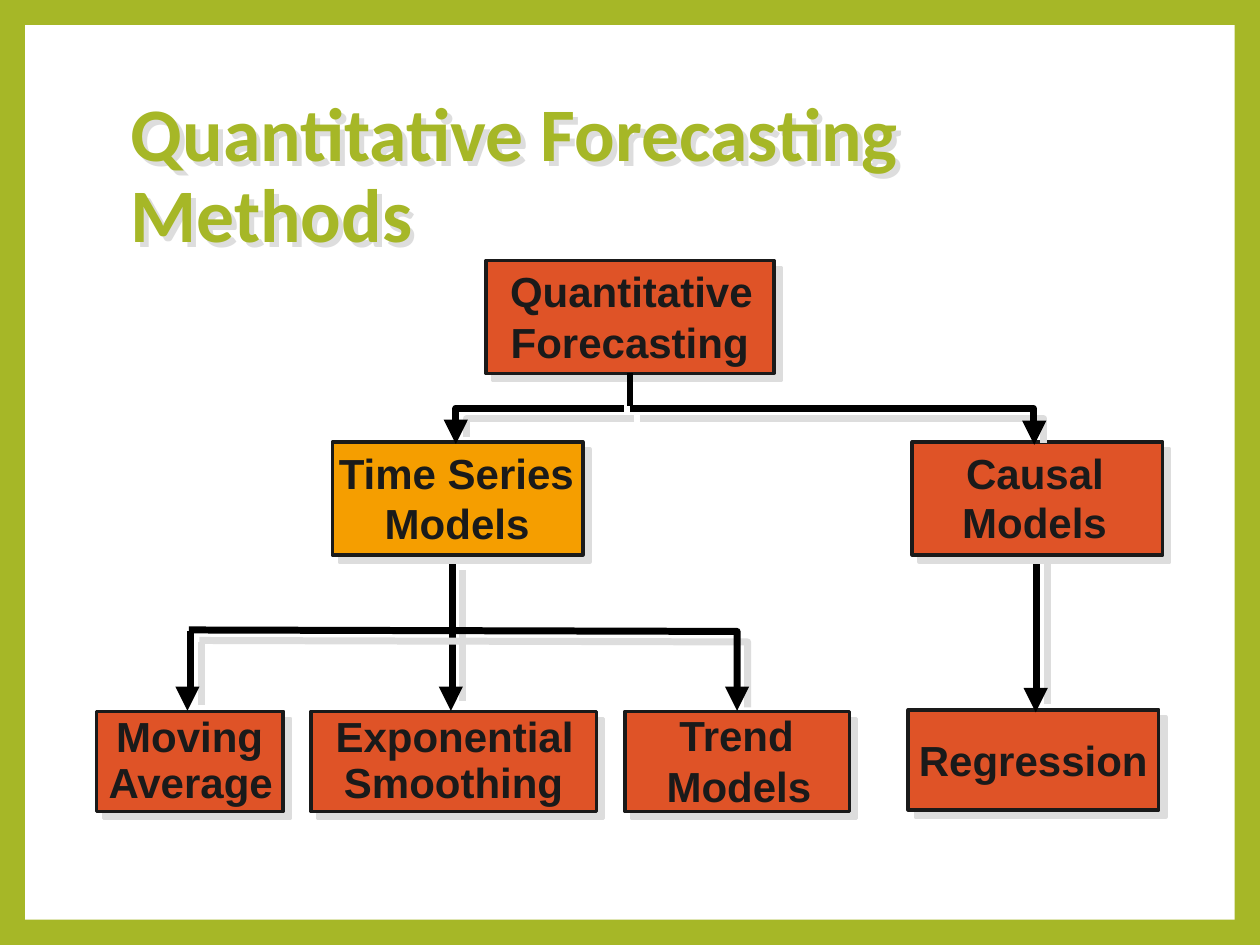
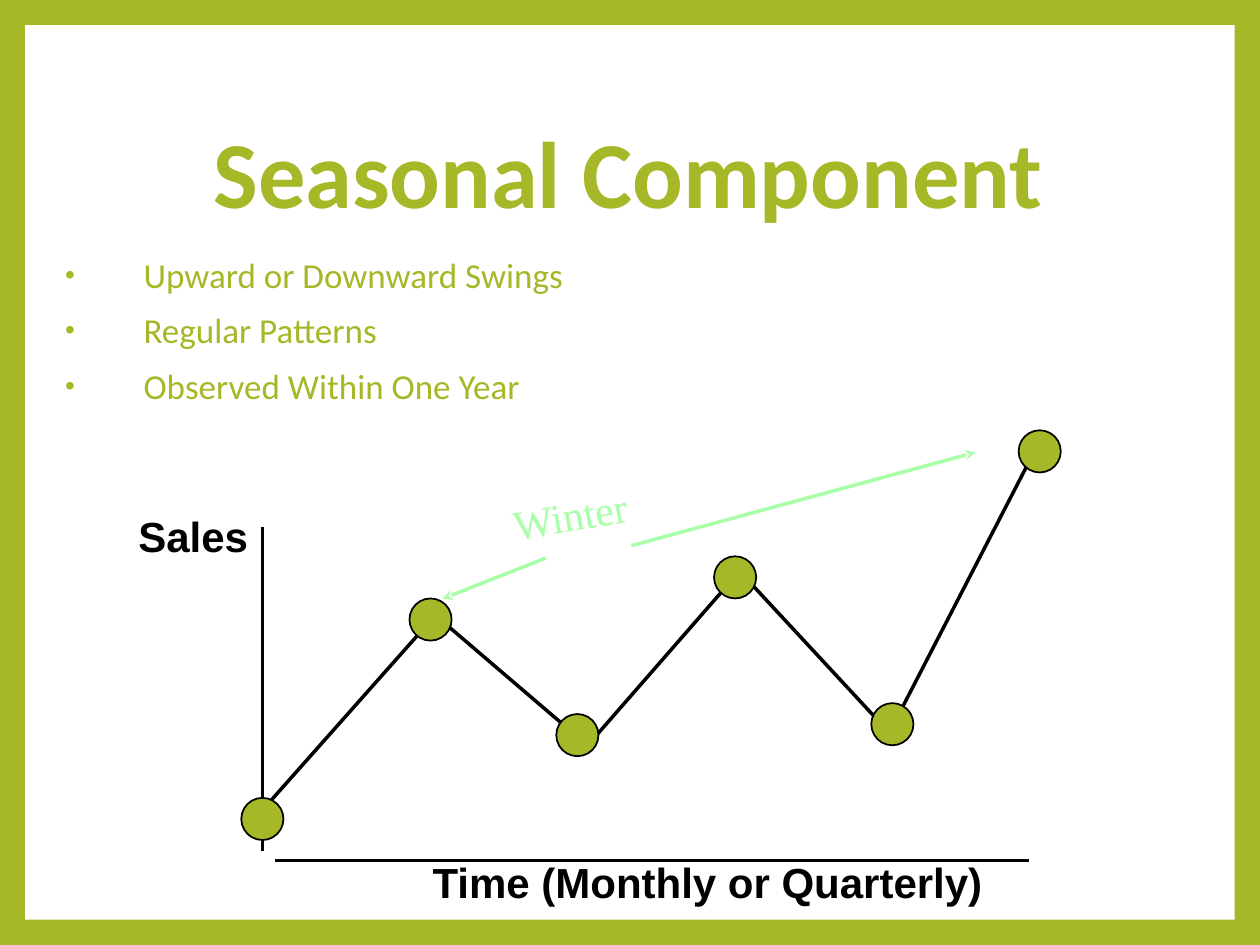
from dataclasses import dataclass

from lxml.etree import SubElement
from pptx import Presentation
from pptx.dml.color import RGBColor
from pptx.enum.shapes import MSO_CONNECTOR, MSO_SHAPE
from pptx.enum.text import MSO_ANCHOR, MSO_AUTO_SIZE, PP_ALIGN
from pptx.oxml.ns import qn
from pptx.util import Cm, Pt


@dataclass(frozen=True)
class Theme:
    green = RGBColor(0xA6, 0xB7, 0x27)
    white = RGBColor(0xFF, 0xFF, 0xFF)
    black = RGBColor(0, 0, 0)
    ink = RGBColor(0x1A, 0x1A, 0x1A)
    orange = RGBColor(0xDF, 0x53, 0x27)
    amber = RGBColor(0xF5, 0x9E, 0x00)
    mint = RGBColor(0xA7, 0xFF, 0xA7)
    shadow = RGBColor(0xDD, 0xDD, 0xDD)
    heading_font = "Calibri"
    label_font = "Arial"
    season_font = "Times New Roman"
    label_size = Pt(24)
    list_size = Pt(20)
    title_shadow = Pt(4)
    box_shadow = Pt(5.7)
    edge_shadow = Pt(8.5)


theme = Theme()


def set_shadow(shape, distance=0):
    """Replace the theme shadow by a grey one to the lower right, or by none."""
    effects = SubElement(shape.element.spPr, qn("a:effectLst"))
    if distance:
        outer = SubElement(effects, qn("a:outerShdw"), dist=str(distance), dir="2700000", algn="ctr")
        SubElement(outer, qn("a:srgbClr"), val=str(theme.shadow))


def set_line(shape, color, width, arrow=None, shadow=0):
    """Style the outline, its arrowhead and the shadow."""
    shape.line.color.rgb = color
    shape.line.width = width
    if arrow:
        SubElement(shape.element.spPr.find(qn("a:ln")), qn("a:tailEnd"), type=arrow)
    set_shadow(shape, shadow)


deck = Presentation()
deck.slide_width = Cm(25.4)
deck.slide_height = Cm(19.05)
methods = deck.slides.add_slide(deck.slide_layouts[5])
seasonal = deck.slides.add_slide(deck.slide_layouts[1])

# Shared frame: green background with a white panel on the master
master = deck.slide_master
master.background.fill.solid()
master.background.fill.fore_color.rgb = theme.green
panel = methods.shapes.add_shape(MSO_SHAPE.RECTANGLE, Cm(0.51), Cm(0.51), Cm(24.38), Cm(18.03))
panel.fill.solid()
panel.fill.fore_color.rgb = theme.white
panel.line.fill.background()
set_shadow(panel)
master.shapes.element.insert(2, panel.element)

# Shared title style
for slide, wording, size, alignment in (
    (methods, "Quantitative Forecasting Methods", Pt(43.2), PP_ALIGN.LEFT),
    (seasonal, "Seasonal Component", Pt(54), PP_ALIGN.CENTER),
):
    title = slide.shapes.title
    title.left, title.top, title.width, title.height = Cm(2.38), Cm(1.7), Cm(20.57), Cm(3.76)
    title.text_frame.text = wording
    title.text_frame.auto_size = MSO_AUTO_SIZE.NONE
    title.text_frame.vertical_anchor = MSO_ANCHOR.MIDDLE
    heading = title.text_frame.paragraphs[0]
    heading.alignment = alignment
    heading.line_spacing = 0.9
    heading.font.name = theme.heading_font
    heading.font.size = size
    heading.font.bold = True
    heading.font.color.rgb = theme.green
set_shadow(methods.shapes.title, theme.title_shadow)

# Slide 1: stems that start behind the boxes
for x, top, bottom in ((9.12, 11.28, 13.92), (20.9, 11.07, 13.97)):
    stem = methods.shapes.add_connector(MSO_CONNECTOR.STRAIGHT, Cm(x), Cm(top), Cm(x), Cm(bottom))
    set_line(stem, theme.black, Pt(4), shadow=theme.edge_shadow)

# Slide 1: boxes, the root first
method_boxes = [
    (9.8, 5.25, 5.8, 2.28, theme.orange),
    (6.7, 8.91, 5.05, 2.28, theme.amber),
    (18.39, 8.91, 5.05, 2.28, theme.orange),
    (1.95, 14.34, 3.76, 2.02, theme.orange),
    (6.27, 14.34, 5.76, 2.02, theme.orange),
    (12.6, 14.34, 4.53, 2.02, theme.orange),
    (18.31, 14.31, 5.05, 2.02, theme.orange),
]
boxes = []
for left, top, width, height, fill in method_boxes:
    box = methods.shapes.add_shape(MSO_SHAPE.RECTANGLE, Cm(left), Cm(top), Cm(width), Cm(height))
    box.fill.solid()
    box.fill.fore_color.rgb = fill
    set_line(box, theme.ink, Pt(2), shadow=theme.box_shadow)
    boxes.append(box)

# Slide 1: branches and arrowheads between the levels
for first, *bends in (
    [(12.7, 8.23), (20.83, 8.23), (20.83, 8.71)],
    [(12.57, 8.23), (9.19, 8.23), (9.19, 8.59)],
    [(3.81, 12.7), (14.86, 12.73), (14.86, 14.05)],
):
    route = methods.shapes.build_freeform(*map(Cm, first))
    route.add_line_segments([(Cm(x), Cm(y)) for x, y in bends], close=False)
    branch = route.convert_to_shape()
    branch.fill.background()
    set_line(branch, theme.black, Pt(4), shadow=theme.edge_shadow)

drop = methods.shapes.add_connector(MSO_CONNECTOR.STRAIGHT, Cm(3.84), Cm(12.73), Cm(3.84), Cm(14))
set_line(drop, theme.black, Pt(4), shadow=theme.edge_shadow)
trunk = methods.shapes.add_connector(MSO_CONNECTOR.STRAIGHT, Cm(12.7), Cm(7.53), Cm(12.7), Cm(8.18))
trunk.begin_connect(boxes[0], 2)
set_line(trunk, theme.black, Pt(4))

head_size = 0.49
for x, top in ((20.88, 13.87), (20.85, 8.48), (9.09, 13.84), (3.78, 13.84), (9.19, 8.46), (14.86, 13.84)):
    outline = methods.shapes.build_freeform(Cm(x + head_size / 2), Cm(top))
    outline.add_line_segments([(Cm(x), Cm(top + head_size)), (Cm(x - head_size / 2), Cm(top))])
    arrowhead = outline.convert_to_shape()
    arrowhead.fill.solid()
    arrowhead.fill.fore_color.rgb = theme.black
    arrowhead.line.fill.background()
    set_shadow(arrowhead)

# Slide 1: one text line per label, centred on its place in the box
method_labels = [
    ("Quantitative", 10.01, 5.23, 5.44),
    ("Forecasting", 10.03, 6.25, 5.33),
    ("Time Series", 6.56, 8.89, 5.28),
    ("Models", 7.49, 9.91, 3.45),
    ("Causal", 19.2, 8.89, 3.33),
    ("Models", 19.13, 9.88, 3.45),
    ("Moving", 2.07, 14.2, 3.51),
    ("Average", 1.9, 15.13, 3.89),
    ("Exponential", 6.5, 14.2, 5.33),
    ("Smoothing", 6.67, 15.13, 4.95),
    ("Trend", 13.4, 14.18, 2.9),
    ("Models", 13.17, 15.2, 3.45),
    ("Regression", 18.25, 14.68, 5.16),
]
for wording, left, top, width in method_labels:
    label = methods.shapes.add_textbox(Cm(left), Cm(top), Cm(width), Cm(1.28))
    label.text_frame.word_wrap = False
    label.text_frame.text = wording
    caption = label.text_frame.paragraphs[0]
    caption.alignment = PP_ALIGN.CENTER
    caption.font.name = theme.label_font
    caption.font.size = theme.label_size
    caption.font.bold = True
    caption.font.color.rgb = theme.ink

# Slide 2: list of traits
traits = seasonal.placeholders[1]
traits.left, traits.top, traits.width, traits.height = Cm(1.06), Cm(5.08), Cm(24.33), Cm(11.43)
traits.text_frame.text = "Upward or Downward Swings\nRegular Patterns\nObserved Within One Year"
traits.text_frame.auto_size = MSO_AUTO_SIZE.NONE
for trait in traits.text_frame.paragraphs:
    trait.line_spacing = 0.9
    trait.space_before = Pt(10)
    properties = trait._p.get_or_add_pPr()
    properties.set("marL", str(Cm(1.58)))
    properties.set("indent", str(-Cm(1.58)))
    bullet_color = SubElement(properties, qn("a:buClr"))
    SubElement(bullet_color, qn("a:srgbClr"), val=str(theme.green))
    SubElement(properties, qn("a:buSzPct"), val="80000")
    SubElement(properties, qn("a:buFont"), typeface="Arial")
    SubElement(properties, qn("a:buChar"), char="•")
    trait.font.name = theme.heading_font
    trait.font.size = theme.list_size
    trait.font.color.rgb = theme.green

# Slide 2: sales sketch with axes, swings and winter arrows
axes = [(5.29, 10.62, 5.29, 17.15), (5.54, 17.35, 20.75, 17.35)]
swings = [
    (5.31, 16.31, 8.69, 12.5),
    (8.89, 12.5, 11.86, 15.04),
    (11.86, 15.01, 14.81, 11.63),
    (14.83, 11.43, 17.78, 14.61),
    (18.01, 14.61, 20.96, 8.89),
]
winter_arrows = [(11, 11.25, 8.92, 12.07), (12.73, 11, 19.66, 9.12)]
for strokes, color, arrow in ((axes + swings, theme.black, None), (winter_arrows, theme.mint, "stealth")):
    for ends in strokes:
        stroke = seasonal.shapes.add_connector(MSO_CONNECTOR.STRAIGHT, *map(Cm, ends))
        set_line(stroke, color, Pt(2), arrow)

diameter = 0.85
for x, y in ((5.29, 16.51), (8.68, 12.49), (11.64, 14.82), (14.82, 11.64), (17.99, 14.6), (20.96, 9.1)):
    sales_point = seasonal.shapes.add_shape(
        MSO_SHAPE.OVAL, Cm(x - diameter / 2), Cm(y - diameter / 2), Cm(diameter), Cm(diameter)
    )
    sales_point.fill.solid()
    sales_point.fill.fore_color.rgb = theme.green
    set_line(sales_point, theme.black, Pt(1))

for wording, left, top, width, font_name, color, bold, alignment, rotation in (
    ("Sales", 2.54, 10.16, 4.01, theme.label_font, theme.black, True, PP_ALIGN.LEFT, 0),
    ("Time (Monthly or Quarterly)", 8.47, 17.15, 12.47, theme.label_font, theme.black, True, PP_ALIGN.LEFT, 0),
    ("Winter", 9.32, 9.75, 4.34, theme.season_font, theme.mint, False, PP_ALIGN.CENTER, 350),
):
    note = seasonal.shapes.add_textbox(Cm(left), Cm(top), Cm(width), Cm(1.27))
    note.rotation = rotation
    note.text_frame.word_wrap = True
    note.text_frame.text = wording
    line = note.text_frame.paragraphs[0]
    line.alignment = alignment
    line.font.name = font_name
    line.font.size = theme.label_size
    line.font.bold = bold
    line.font.color.rgb = color

deck.save("out.pptx")
